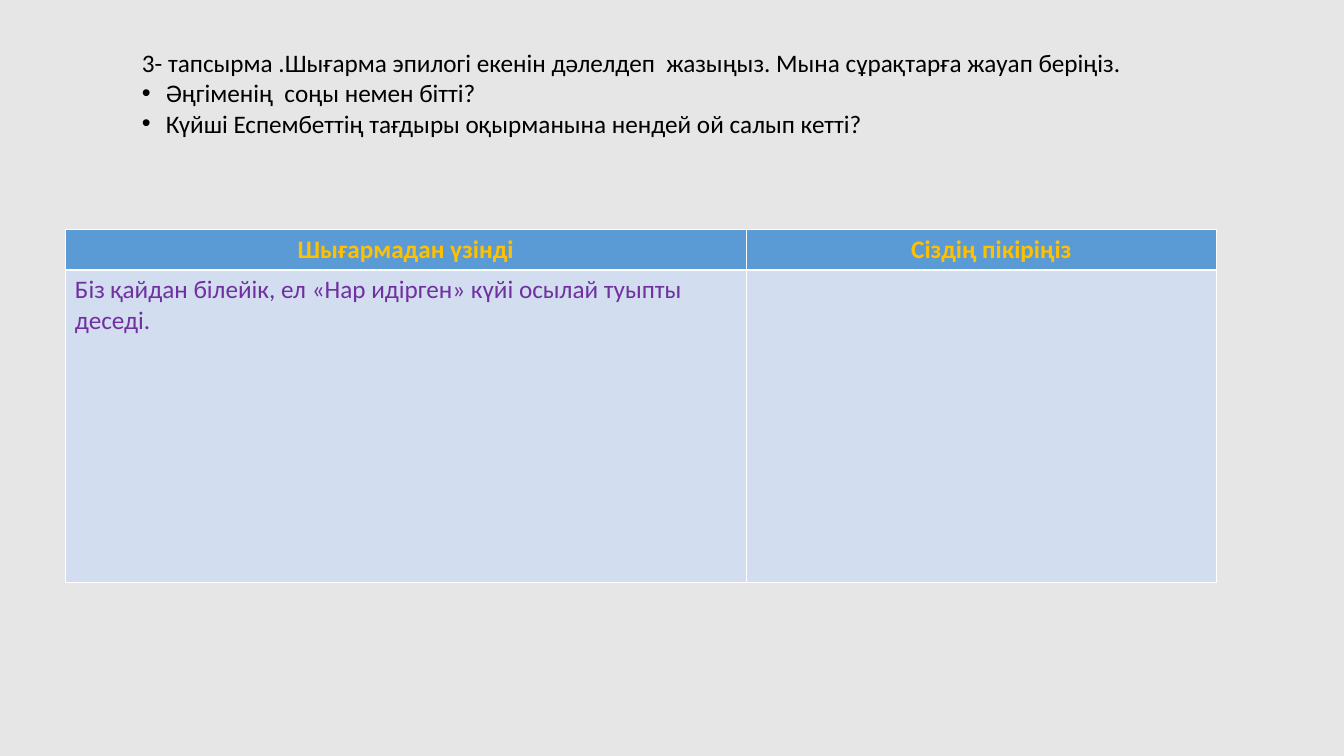
"""Build a task slide with two questions and an excerpt and opinion table."""
from lxml import etree
from pptx import Presentation
from pptx.dml.color import RGBColor
from pptx.enum.text import PP_ALIGN
from pptx.oxml.ns import qn
from pptx.util import Cm, Pt

LEFT, CENTER = PP_ALIGN.LEFT, PP_ALIGN.CENTER
BACKGROUND = RGBColor(0xE7, 0xE6, 0xE6)
BLACK = RGBColor(0, 0, 0)
WHITE = RGBColor(0xFF, 0xFF, 0xFF)
GOLD = RGBColor(0xFF, 0xC0, 0x00)
PURPLE = RGBColor(0x70, 0x30, 0xA0)
BLUE = RGBColor(0x5B, 0x9B, 0xD5)
PALE_BLUE = RGBColor(0xD2, 0xDE, 0xEF)

TASK = "3- тапсырма .Шығарма эпилогі екенін дәлелдеп  жазыңыз. Мына сұрақтарға жауап беріңіз."
QUESTIONS = [
    "Әңгіменің  соңы немен бітті?",
    "Күйші Еспембеттің тағдыры оқырманына нендей ой салып кетті?",
]
ROWS = [
    [("Шығармадан үзінді", CENTER, 0.25), ("Сіздің пікіріңіз", LEFT, 4.15)],
    [("Біз қайдан білейік, ел «Нар идірген» күйі осылай туыпты деседі.", LEFT, 0.25),
     ("", LEFT, 0.25)],
]
ROW_STYLES = [
    {"fill": BLUE, "color": GOLD, "bold": True},
    {"fill": PALE_BLUE, "color": PURPLE, "bold": False},
]
COLUMN_WIDTHS = [17.18, 11.85]
ROW_HEIGHTS = [1.02, 7.87]
THIN, THICK = Pt(0.45), Pt(1.47)
BULLET_INDENT = Cm(0.6)


def write(paragraph, text, color, bold=False):
    run = paragraph.add_run()
    run.text = text
    run.font.color.rgb = color
    for name, value in {"name": "Calibri", "size": Pt(18), "bold": bold}.items():
        setattr(run.font, name, value)


def add_bullet(paragraph):
    properties = paragraph._p.get_or_add_pPr()
    properties.set("marL", str(BULLET_INDENT))
    properties.set("indent", str(-BULLET_INDENT))
    etree.SubElement(properties, qn("a:buFont"), typeface="Arial")
    etree.SubElement(properties, qn("a:buChar"), char="•")


def add_borders(cell, widths):
    properties = cell._tc.get_or_add_tcPr()
    for position, (side, width) in enumerate(widths.items()):
        line = etree.Element(qn(f"a:ln{side}"), w=str(width))
        fill = etree.SubElement(line, qn("a:solidFill"))
        etree.SubElement(fill, qn("a:srgbClr"), val=str(WHITE))
        properties.insert(position, line)


def add_task(slide):
    box = slide.shapes.add_textbox(Cm(3.33), Cm(1.07), Cm(26.54), Cm(5.59))
    frame = box.text_frame
    frame.word_wrap = True
    write(frame.paragraphs[0], TASK, BLACK)
    for question in QUESTIONS:
        paragraph = frame.add_paragraph()
        add_bullet(paragraph)
        write(paragraph, question, BLACK)


def add_answer_table(slide):
    table = slide.shapes.add_table(
        len(ROWS), len(COLUMN_WIDTHS), Cm(1.64), Cm(5.77),
        Cm(sum(COLUMN_WIDTHS)), Cm(sum(ROW_HEIGHTS))).table
    for column, width in zip(table.columns, COLUMN_WIDTHS):
        column.width = Cm(width)
    for row_index, (row, height) in enumerate(zip(table.rows, ROW_HEIGHTS)):
        row.height = Cm(height)
        style = ROW_STYLES[row_index]
        top, bottom = (THIN, THICK) if row_index == 0 else (THICK, THIN)
        for cell, (text, alignment, margin) in zip(row.cells, ROWS[row_index]):
            cell.margin_left = Cm(margin)
            cell.fill.solid()
            cell.fill.fore_color.rgb = style["fill"]
            add_borders(cell, {"L": THIN, "R": THIN, "T": top, "B": bottom})
            if text:
                paragraph = cell.text_frame.paragraphs[0]
                paragraph.alignment = alignment
                write(paragraph, text, style["color"], style["bold"])


def main():
    presentation = Presentation()
    presentation.slide_width, presentation.slide_height = Cm(33.88), Cm(19.05)
    slide = presentation.slides.add_slide(presentation.slide_layouts[6])
    slide.background.fill.solid()
    slide.background.fill.fore_color.rgb = BACKGROUND
    add_answer_table(slide)
    add_task(slide)
    presentation.save("out.pptx")


if __name__ == "__main__":
    main()
